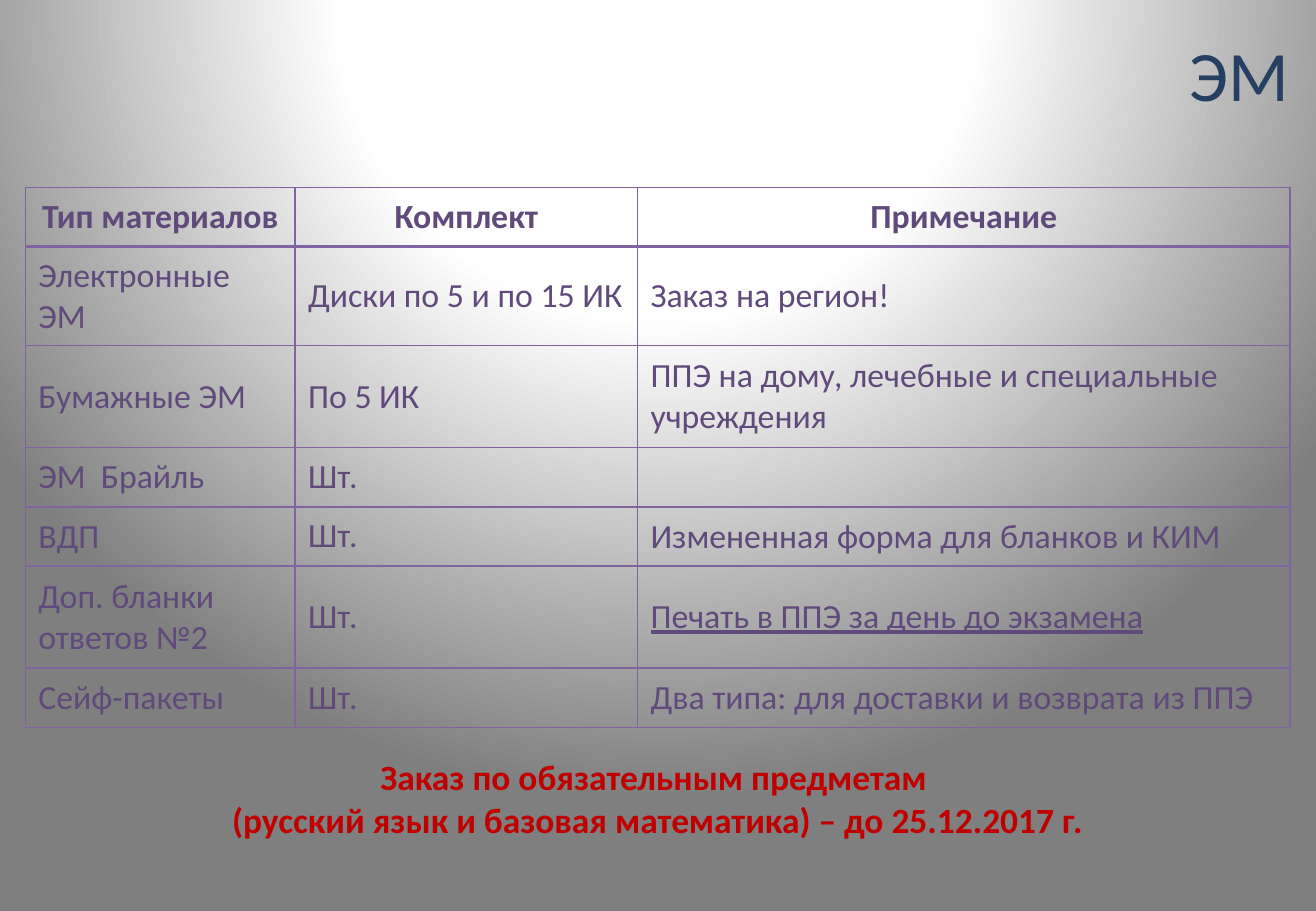
from pptx import Presentation
from pptx.dml.color import RGBColor
from pptx.enum.text import MSO_ANCHOR, PP_ALIGN
from pptx.oxml import parse_xml
from pptx.oxml.ns import nsdecls
from pptx.util import Cm, Pt

MIDDLE, TOP = MSO_ANCHOR.MIDDLE, MSO_ANCHOR.TOP
LEFT, CENTER, RIGHT = PP_ALIGN.LEFT, PP_ALIGN.CENTER, PP_ALIGN.RIGHT
FONT = "Calibri"
COLORS = {
    "title": "254061",
    "table": "604A7B",
    "border": "8064A2",
    "notice": "C00000",
}
BACKGROUND_STOPS = [(0, "FFFFFF"), (40, "FEFEFE"), (100, "7F7F7F")]


def write(frame, text, size, color, align, bold=False):
    frame.word_wrap = True
    frame.text = text
    for para in frame.paragraphs:
        para.alignment = align
        for span in para.runs:
            span.font.name = FONT
            span.font.size = Pt(size)
            span.font.bold = bold
            span.font.color.rgb = RGBColor.from_string(COLORS[color])


def add_border(cell, side, width):
    cell._tc.get_or_add_tcPr().append(parse_xml(
        f'<a:ln{side} {nsdecls("a")} w="{Pt(width)}"><a:solidFill>'
        f'<a:srgbClr val="{COLORS["border"]}"/></a:solidFill></a:ln{side}>'))


deck = Presentation()
deck.slide_width, deck.slide_height = Cm(27.51), Cm(19.05)
page = deck.slides.add_slide(deck.slide_layouts[6])

# Background: radial gradient centred above the slide
stops = "".join(f'<a:gs pos="{place * 1000}"><a:srgbClr val="{color}"/></a:gs>'
                for place, color in BACKGROUND_STOPS)
page.element.cSld.insert(0, parse_xml(
    f'<p:bg {nsdecls("p", "a")}><p:bgPr><a:gradFill rotWithShape="1">'
    f'<a:gsLst>{stops}</a:gsLst><a:path path="circle">'
    '<a:fillToRect l="50000" t="-80000" r="50000" b="180000"/></a:path>'
    '</a:gradFill><a:effectLst/></p:bgPr></p:bg>'))

# Title
title = page.shapes.add_textbox(Cm(8.56), Cm(0.2), Cm(18.64), Cm(2.67))
write(title.text_frame, "ЭМ", 42, "title", RIGHT)
title.text_frame.vertical_anchor = MIDDLE

# Table of materials
rows = [
    ("Тип материалов", "Комплект", "Примечание"),
    ("Электронные ЭМ", "Диски по 5 и по 15 ИК", "Заказ на регион!"),
    ("Бумажные ЭМ", "По 5 ИК", "ППЭ на дому, лечебные и специальные учреждения"),
    ("ЭМ  Брайль", "Шт.", ""),
    ("ВДП", "Шт.", "Измененная форма для бланков и КИМ"),
    ("Доп. бланки ответов №2", "Шт.", "Печать в ППЭ за день до экзамена"),
    ("Сейф-пакеты", "Шт.", "Два типа: для доставки и возврата из ППЭ"),
]
column_widths = [5.64, 7.16, 13.64]
row_heights = [1.24, 2.07, 2.13, 1.24, 1.24, 2.13, 1.24]
table = page.shapes.add_table(len(rows), len(column_widths), Cm(0.53), Cm(3.92),
                              Cm(sum(column_widths)), Cm(sum(row_heights))).table
table.first_row = table.horz_banding = False
for column, width in zip(table.columns, column_widths):
    column.width = Cm(width)
for row_number, (texts, height) in enumerate(zip(rows, row_heights)):
    table.rows[row_number].height = Cm(height)
    header = row_number == 0
    for cell, text in zip(table.rows[row_number].cells, texts):
        write(cell.text_frame, text, 20, "table", CENTER if header else LEFT, header)
        cell.vertical_anchor = TOP if header else MIDDLE
        cell.margin_left = cell.margin_right = Cm(0.27)
        cell.margin_top = cell.margin_bottom = Cm(0.18)
        for side in "LRTB":
            add_border(cell, side, 2 if header and side == "B" else 1)
        cell.fill.background()
table.cell(4, 1).vertical_anchor = TOP
table.cell(5, 2).text_frame.paragraphs[0].runs[0].font.underline = True

# Deadline notice
notice = page.shapes.add_textbox(Cm(0.53), Cm(15.65), Cm(26.44), Cm(2.11))
frame = notice.text_frame
write(frame, "Заказ по обязательным предметам \n"
      "(русский язык и базовая математика) – до 25.12.2017 г.",
      21, "notice", CENTER, True)
frame.margin_left = frame.margin_right = Cm(0.3)
frame.margin_top = frame.margin_bottom = Cm(0.15)

deck.save("out.pptx")
